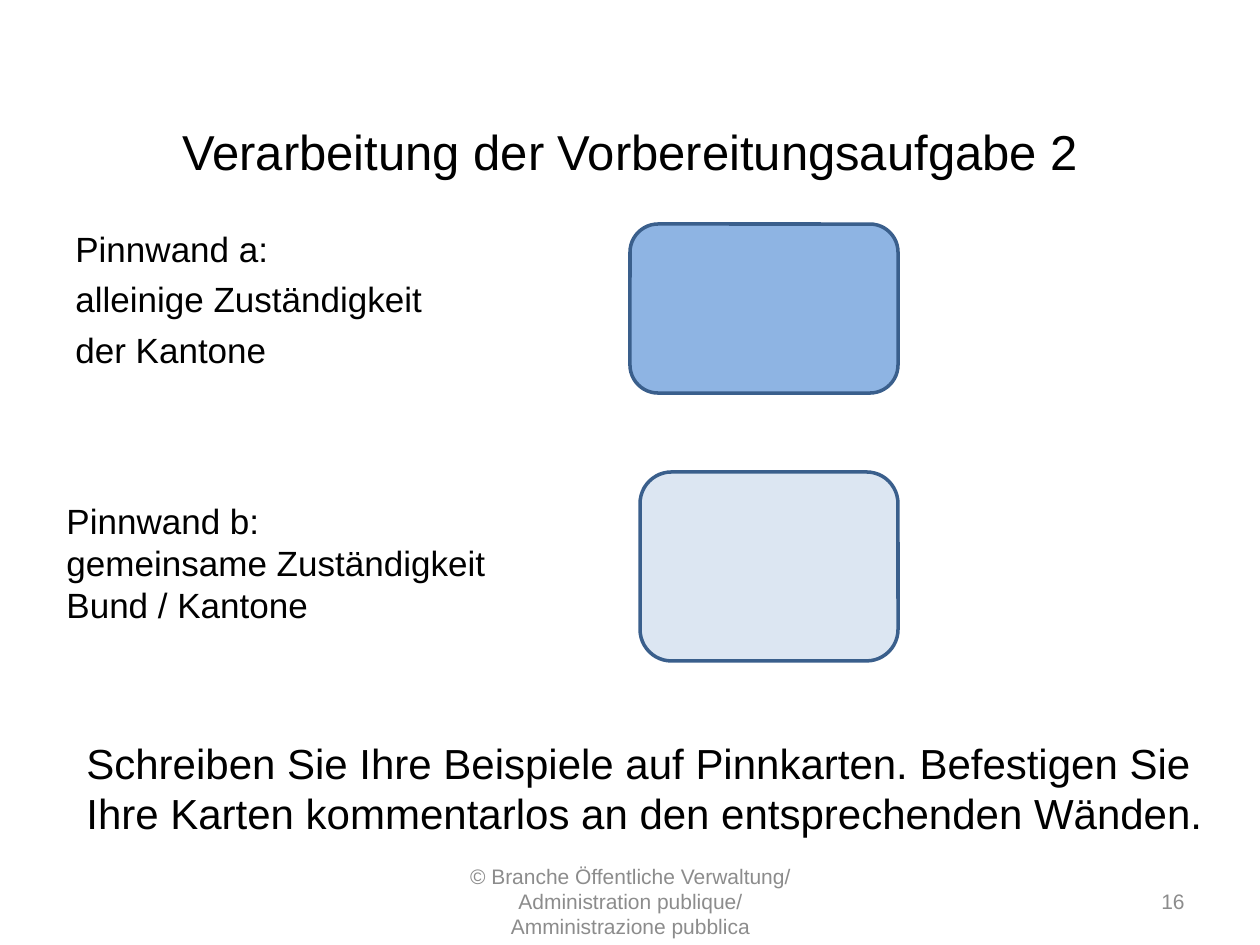
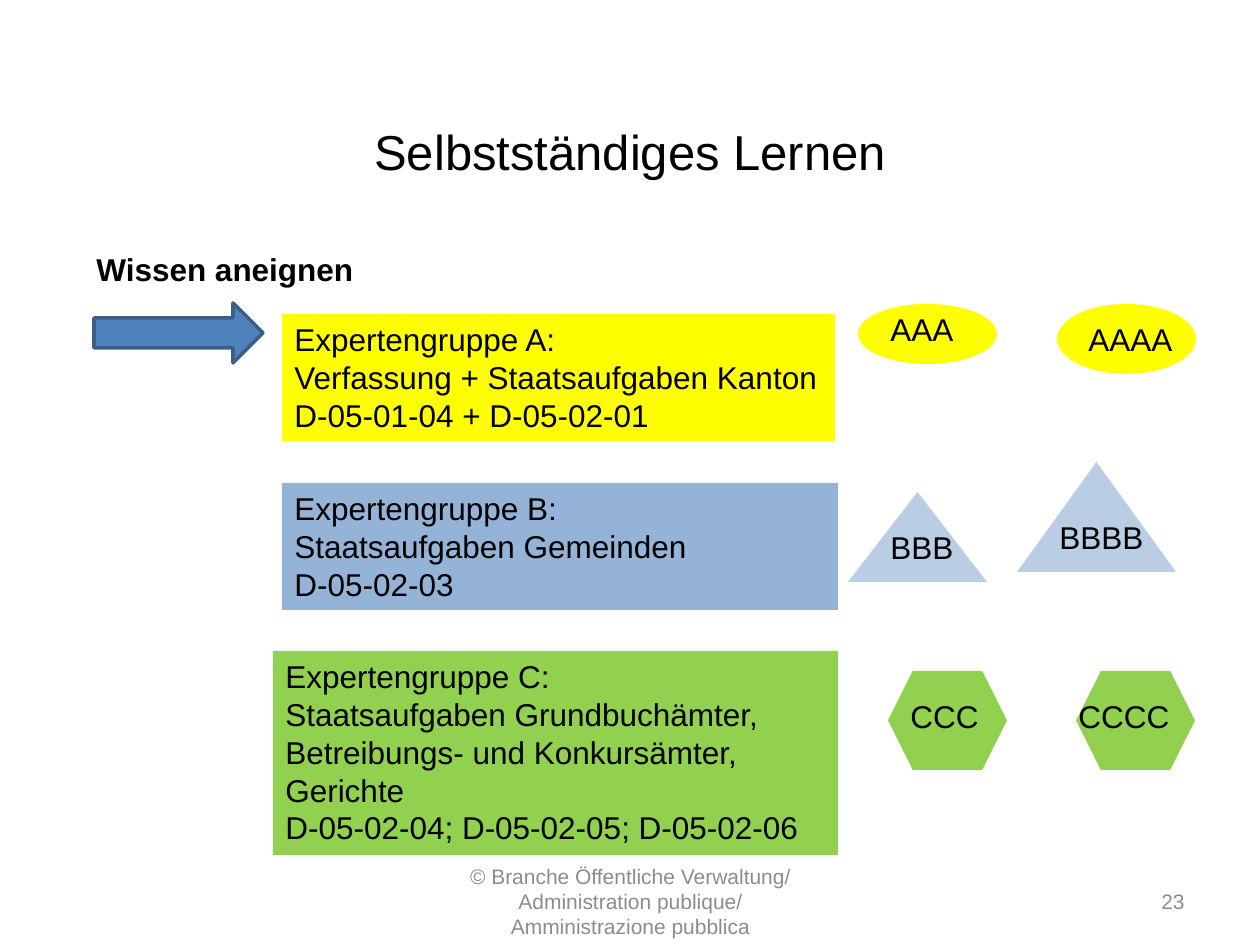
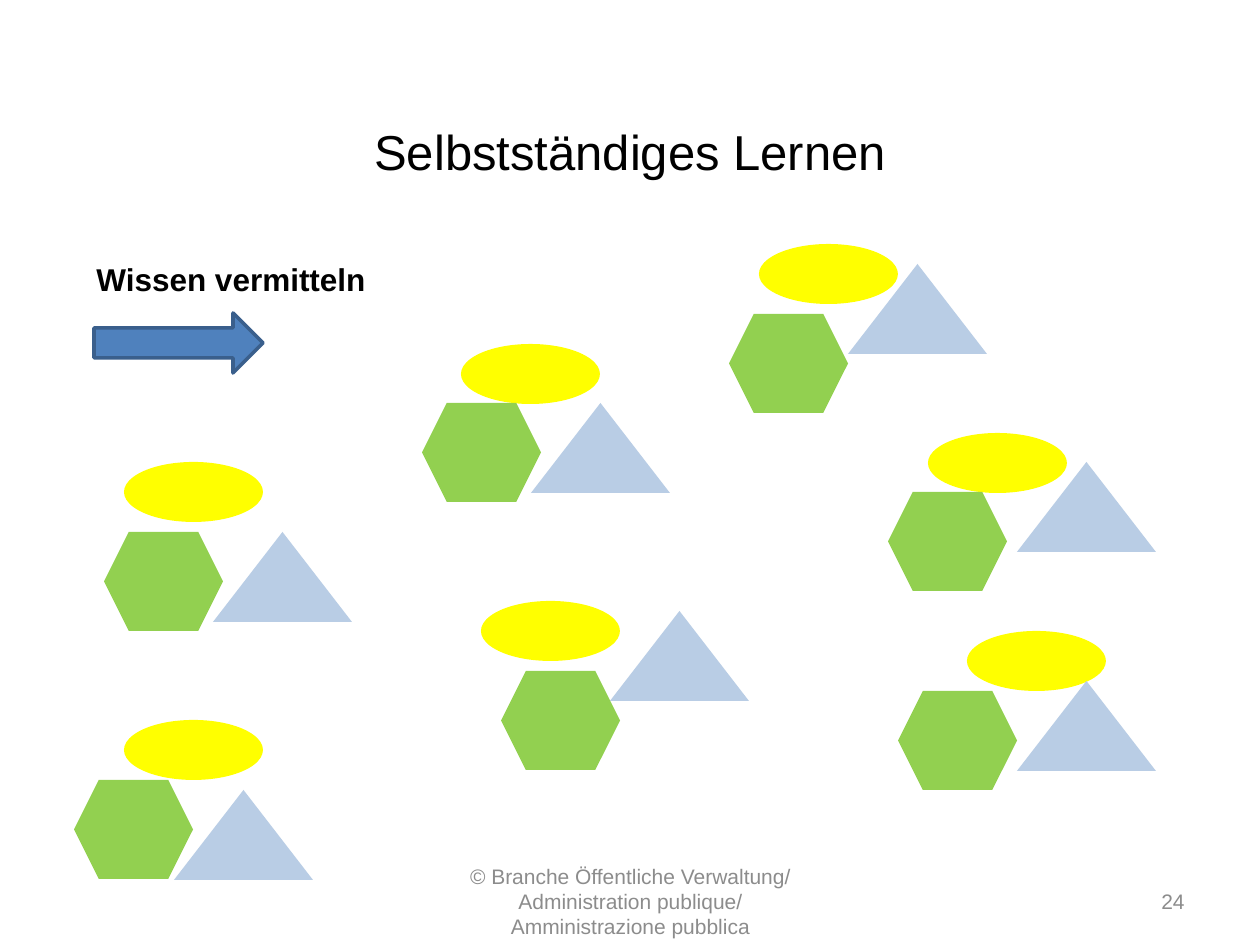
from pptx import Presentation
from pptx import util as u
from pptx.dml.color import RGBColor
from pptx.enum import shapes, text

COLORS = {
    "text": "000000", "footer": "8C8C8C", "outline": "3A5F8C", "arrow": "4F81BD",
    "wall_a": "8EB4E3", "wall_b": "DCE6F2",
    "yellow": "FFFF00", "blue": "95B3D7", "pale_blue": "B9CDE5", "green": "92D050",
}
FONT = "Arial"
EMU_PER_PX = 914400 / 126
FOOTER = "© Branche Öffentliche Verwaltung/ Administration publique/ Amministrazione pubblica"

SHAPE = shapes.MSO_SHAPE
ALIGN = text.PP_ALIGN
ANCHOR = text.MSO_ANCHOR

# Each expert group has one symbol: preset, colour, width, height
SYMBOLS = {
    "A": (SHAPE.OVAL, "yellow", 139, 60),
    "B": (SHAPE.ISOSCELES_TRIANGLE, "pale_blue", 139, 90),
    "C": (SHAPE.HEXAGON, "green", 119, 99),
}


def px(*lengths):
    return [u.Emu(round(length * EMU_PER_PX)) for length in lengths]


def color(name):
    return RGBColor.from_string(COLORS[name])


def write(shape, content, size, bold=False, ink="text", align=ALIGN.LEFT,
          anchor=ANCHOR.TOP, wrap=True, gap=0):
    frame = shape.text_frame
    frame.text = content
    frame.word_wrap = wrap
    frame.vertical_anchor = anchor
    for index, paragraph in enumerate(frame.paragraphs):
        paragraph.alignment = align
        paragraph.space_before = u.Pt(gap if index else 0)
        for run in paragraph.runs:
            run.font.name = FONT
            run.font.size = u.Pt(size)
            run.font.bold = bold
            run.font.color.rgb = color(ink)


def add_text(slide, box, content, size, **style):
    write(slide.shapes.add_textbox(*px(*box)), content, size, **style)


def add_shape(slide, preset, box, fill, outline=False):
    shape = slide.shapes.add_shape(preset, *px(*box))
    shape.shadow.inherit = False
    shape.fill.solid()
    shape.fill.fore_color.rgb = color(fill)
    if outline:
        shape.line.color.rgb = color("outline")
        shape.line.width = u.Pt(2)
    else:
        shape.line.fill.background()
    return shape


def add_symbol(slide, group, left, top, width=None, height=None):
    preset, fill, usual_width, usual_height = SYMBOLS[group]
    box = (left, top, width or usual_width, height or usual_height)
    add_shape(slide, preset, box, fill)


def add_step(slide, label, top):
    """Bold step name with an arrow below it."""
    add_text(slide, (84, top, 300, 50), label, 18, bold=True)
    add_shape(slide, SHAPE.RIGHT_ARROW, (94, top + 59, 169, 60), "arrow", outline=True)


def add_slide(presentation, title, number):
    slide = presentation.slides.add_slide(presentation.slide_layouts[5])
    heading = slide.shapes.title
    heading.left, heading.top, heading.width, heading.height = px(63, 106, 1134, 89)
    write(heading, title, 28, align=ALIGN.CENTER, anchor=ANCHOR.MIDDLE)
    add_text(slide, (903, 876, 294, 50), str(number), 12, ink="footer",
             align=ALIGN.RIGHT, anchor=ANCHOR.MIDDLE)
    add_text(slide, (431, 876, 399, 50), FOOTER, 12, ink="footer",
             align=ALIGN.CENTER, anchor=ANCHOR.MIDDLE)
    return slide


def build_pin_walls(presentation):
    slide = add_slide(presentation, "Verarbeitung der Vorbereitungsaufgabe 2", 16)
    add_text(slide, (63, 221, 540, 160),
             "Pinnwand a:\nalleinige Zuständigkeit\nder Kantone", 20, gap=5)
    add_shape(slide, SHAPE.ROUNDED_RECTANGLE, (630, 224, 268, 169), "wall_a", outline=True)
    add_text(slide, (54, 493, 447, 140),
             "Pinnwand b:\ngemeinsame Zuständigkeit\nBund / Kantone", 20)
    add_shape(slide, SHAPE.ROUNDED_RECTANGLE, (640, 472, 258, 189), "wall_b", outline=True)
    add_text(slide, (74, 731, 1177, 115),
             "Schreiben Sie Ihre Beispiele auf Pinnkarten. Befestigen Sie\v"
             "Ihre Karten kommentarlos an den entsprechenden Wänden.", 24)


def build_expert_groups(presentation):
    slide = add_slide(presentation, "Selbstständiges Lernen", 23)
    add_step(slide, "Wissen aneignen", 244)

    # Task of each group
    tasks = [
        ((282, 314, 553, 127), "yellow",
         "Expertengruppe A:\nVerfassung + Staatsaufgaben Kanton\nD-05-01-04 + D-05-02-01"),
        ((282, 483, 556, 127), "blue",
         "Expertengruppe B:\nStaatsaufgaben Gemeinden\nD-05-02-03"),
        ((273, 651, 565, 204), "green",
         "Expertengruppe C:\nStaatsaufgaben Grundbuchämter,\n"
         "Betreibungs- und Konkursämter,\nGerichte\n"
         "D-05-02-04; D-05-02-05; D-05-02-06"),
    ]
    for box, fill, content in tasks:
        write(add_shape(slide, SHAPE.RECTANGLE, box, fill), content, 18)

    # Symbols with three or four members each
    teams = [
        ("AAA", (858, 304), (878, 304, 89, 50)),
        ("AAAA", (1057, 304, 139, 70), (1076, 314, 111, 50)),
        ("BBB", (848, 492), (878, 522, 89, 50)),
        ("BBBB", (1017, 462, 159, 110), (1047, 512, 111, 50)),
        ("CCC", (888, 671), (898, 691, 95, 50)),
        ("CCCC", (1076, 671), (1066, 691, 117, 50)),
    ]
    for members, symbol_box, label_box in teams:
        add_symbol(slide, members[0], *symbol_box)
        add_text(slide, label_box, members, 18, wrap=False)


def build_mixed_groups(presentation):
    slide = add_slide(presentation, "Selbstständiges Lernen", 24)
    add_step(slide, "Wissen vermitteln", 254)

    # One member of each expert group: places of A, B and C
    mixed_groups = [
        ((124, 462), (213, 532), (104, 532)),
        ((124, 720), (174, 790), (74, 780)),
        ((461, 344), (531, 403), (422, 403)),
        ((481, 601), (610, 611), (501, 671)),
        ((759, 244), (848, 264), (729, 314)),
        ((928, 433), (1017, 462), (888, 492)),
        ((967, 631), (1017, 681), (898, 691)),
    ]
    for places in mixed_groups:
        for group, place in zip(SYMBOLS, places):
            add_symbol(slide, group, *place)


def main():
    presentation = Presentation()
    presentation.slide_width, presentation.slide_height = u.Inches(10), u.Inches(7.5)
    build_pin_walls(presentation)
    build_expert_groups(presentation)
    build_mixed_groups(presentation)
    presentation.save("out.pptx")


if __name__ == "__main__":
    main()
